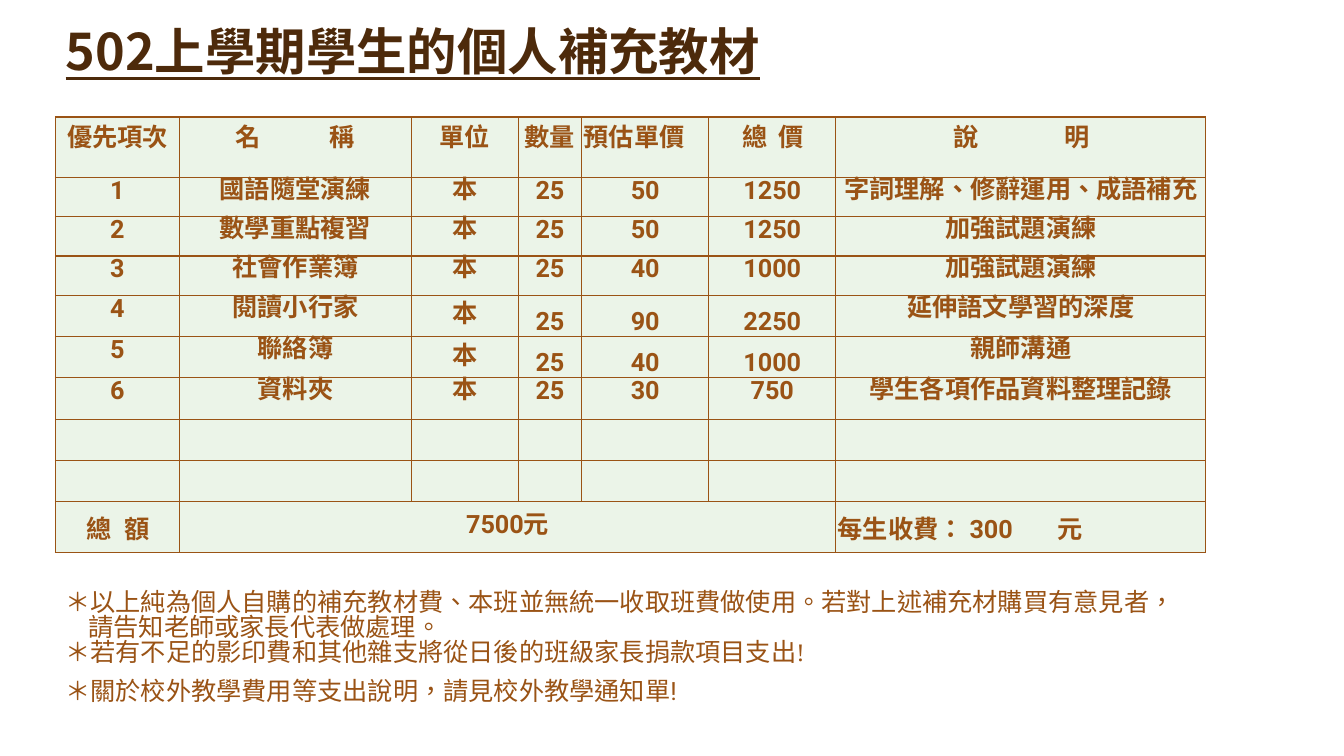
from dataclasses import dataclass

from lxml import etree
from pptx import Presentation
from pptx.dml.color import RGBColor
from pptx.enum.lang import MSO_LANGUAGE_ID
from pptx.enum.text import MSO_ANCHOR, MSO_AUTO_SIZE, PP_ALIGN
from pptx.oxml.ns import qn
from pptx.util import Inches, Pt

TOP, MIDDLE, BOTTOM = MSO_ANCHOR.TOP, MSO_ANCHOR.MIDDLE, MSO_ANCHOR.BOTTOM
LEFT, CENTER = PP_ALIGN.LEFT, PP_ALIGN.CENTER
NO_FIT, GROW = MSO_AUTO_SIZE.NONE, MSO_AUTO_SIZE.SHAPE_TO_FIT_TEXT
TAIWAN = MSO_LANGUAGE_ID.TRADITIONAL_CHINESE
TITLE_ONLY = 5


@dataclass(frozen=True)
class Theme:
    title_color: RGBColor = RGBColor.from_string("4D2A0B")
    text_color: RGBColor = RGBColor.from_string("9A5315")
    cell_fill: RGBColor = RGBColor.from_string("EBF4E8")
    title_size: Pt = Pt(36)
    body_size: Pt = Pt(18)
    border_width: Pt = Pt(1)
    chinese_font: str = "Noto Sans CJK SC"
    table_font: str = "Roboto"
    remark_font: str = "Times New Roman"


@dataclass(frozen=True)
class TabbedText:
    """Words set apart by a tab; start and stop are inches inside the cell."""
    text: str
    start: float
    stop: float


HEADINGS = ["優先項次", TabbedText("名\t稱", 0.56, 0.93), "單位", "數量", "預估單價",
            TabbedText("總\t價", 0.33, 0.36), TabbedText("說\t明", 1.17, 1.1)]
MATERIALS = [
    ("國語隨堂演練", 50, 1250, "字詞理解、修辭運用、成語補充"),
    ("數學重點複習", 50, 1250, "加強試題演練"),
    ("社會作業簿", 40, 1000, "加強試題演練"),
    ("閱讀小行家", 90, 2250, "延伸語文學習的深度"),
    ("聯絡簿", 40, 1000, "親師溝通"),
    ("資料夾", 30, 750, "學生各項作品資料整理記錄"),
]
COLUMN_WIDTHS = [1.23, 2.3, 1.06, 0.63, 1.26, 1.26, 3.67]
ROW_HEIGHTS = [0.6] + [0.39] * 3 + [0.41] * 5 + [0.5]
LOWERED_ITEMS = (4, 5)
LOWERED_ANCHORS = [TOP, TOP, MIDDLE, BOTTOM, BOTTOM, BOTTOM, TOP]


class MaterialSlide:
    def __init__(self, presentation, theme):
        self.theme = theme
        layout = presentation.slide_layouts[TITLE_ONLY]
        self.slide = presentation.slides.add_slide(layout)

    def run(self, paragraph, text, font_name, size, color, bold=False):
        run = paragraph.add_run()
        run.text = text
        font = run.font
        font.name, font.size, font.bold = font_name, size, bold
        font.color.rgb = color
        font.language_id = TAIWAN
        properties = run._r.get_or_add_rPr()
        etree.SubElement(properties, qn("a:ea"), typeface=self.theme.chinese_font)
        return run

    def title(self, text):
        theme, title = self.theme, self.slide.shapes.title
        title.left, title.top = Inches(0.55), Inches(-0.47)
        title.width, title.height = Inches(11), Inches(1.33)
        frame = title.text_frame
        frame.vertical_anchor, frame.auto_size = BOTTOM, NO_FIT
        paragraph = frame.paragraphs[0]
        paragraph.alignment, paragraph.line_spacing = LEFT, 0.9
        run = self.run(paragraph, text, theme.chinese_font, theme.title_size,
                       theme.title_color, bold=True)
        run.font.underline = True

    def table(self, left, top):
        rows, columns = len(ROW_HEIGHTS), len(COLUMN_WIDTHS)
        frame = self.slide.shapes.add_table(
            rows, columns, Inches(left), Inches(top),
            Inches(sum(COLUMN_WIDTHS)), Inches(sum(ROW_HEIGHTS)))
        table = frame.table
        table.first_row = table.horz_banding = False
        for column, width in zip(table.columns, COLUMN_WIDTHS):
            column.width = Inches(width)
        for row, height in zip(table.rows, ROW_HEIGHTS):
            row.height = Inches(height)
        for cell in table.iter_cells():
            cell.margin_left = cell.margin_right = Inches(0.02)
            cell.margin_top = cell.margin_bottom = 0
            self.borders(cell)
            cell.fill.solid()
            cell.fill.fore_color.rgb = self.theme.cell_fill
        return table

    def borders(self, cell):
        properties = cell._tc.get_or_add_tcPr()
        for side in ("a:lnL", "a:lnR", "a:lnT", "a:lnB"):
            line = etree.SubElement(properties, qn(side), w=str(self.theme.border_width))
            fill = etree.SubElement(line, qn("a:solidFill"))
            etree.SubElement(fill, qn("a:srgbClr"), val=str(self.theme.text_color))

    def cell_text(self, cell, content, anchor=TOP, alignment=CENTER, line_spacing=None):
        theme = self.theme
        cell.vertical_anchor = anchor
        paragraph = cell.text_frame.paragraphs[0]
        paragraph.alignment, paragraph.line_spacing = alignment, line_spacing
        text = content
        if isinstance(content, TabbedText):
            text = content.text
            paragraph.alignment = LEFT
            cell.margin_left = Inches(content.start)
            tabs = etree.SubElement(paragraph._p.get_or_add_pPr(), qn("a:tabLst"))
            etree.SubElement(tabs, qn("a:tab"), pos=str(Inches(content.stop)), algn="l")
        self.run(paragraph, text, theme.table_font, theme.body_size,
                 theme.text_color, bold=True)

    def remarks(self, remarks, left, top, width, height):
        """Each remark gives text, left indent, first-line indent, line spacing and font."""
        theme = self.theme
        box = self.slide.shapes.add_textbox(
            Inches(left), Inches(top), Inches(width), Inches(height))
        frame = box.text_frame
        frame.word_wrap, frame.auto_size = True, GROW
        for index, (text, margin, indent, line_spacing, font_name) in enumerate(remarks):
            paragraph = frame.add_paragraph() if index else frame.paragraphs[0]
            paragraph.space_before = Pt(6 if index else 0)
            paragraph.line_spacing = line_spacing
            properties = paragraph._p.get_or_add_pPr()
            properties.set("marL", str(Inches(margin)))
            properties.set("indent", str(Inches(indent)))
            self.run(paragraph, text, font_name, theme.body_size, theme.text_color)


def fill_materials(page, table):
    for column, heading in enumerate(HEADINGS):
        alignment = LEFT if heading == "預估單價" else CENTER
        page.cell_text(table.cell(0, column), heading, alignment=alignment)

    for item, (name, price, total, purpose) in enumerate(MATERIALS, start=1):
        anchors = LOWERED_ANCHORS if item in LOWERED_ITEMS else [TOP] * len(HEADINGS)
        values = (item, name, "本", 25, price, total, purpose)
        for column, (value, anchor) in enumerate(zip(values, anchors)):
            page.cell_text(table.cell(item, column), str(value), anchor,
                           line_spacing=Pt(20))

    last = len(ROW_HEIGHTS) - 1
    table.cell(last, 1).merge(table.cell(last, 5))
    page.cell_text(table.cell(last, 0), TabbedText("總\t額", 0.31, 0.37), MIDDLE)
    page.cell_text(table.cell(last, 1), "7500元", MIDDLE, line_spacing=Pt(20))
    page.cell_text(table.cell(last, 6),
                   TabbedText("每生收費： 300\t元", 0.02, 2.18), MIDDLE)


def main():
    presentation = Presentation()
    presentation.slide_width, presentation.slide_height = Inches(13.33), Inches(7.5)
    theme = Theme()
    page = MaterialSlide(presentation, theme)
    page.title("502上學期學生的個人補充教材")
    fill_materials(page, page.table(0.55, 1.16))
    page.remarks([
        ("＊以上純為個人自購的補充教材費、本班並無統一收取班費做使用。若對上述補充材購買有意見者，",
         0.17, -0.17, Pt(12), theme.remark_font),
        ("請告知老師或家長代表做處理。", 0.23, 0, Pt(12), theme.remark_font),
        ("＊若有不足的影印費和其他雜支將從日後的班級家長捐款項目支出!",
         0, 0, Pt(12), theme.remark_font),
        ("＊關於校外教學費用等支出說明，請見校外教學通知單!", 0, 0, 1.0, theme.table_font),
    ], 0.55, 5.9, 12.5, 1.16)
    presentation.save("out.pptx")


if __name__ == "__main__":
    main()
